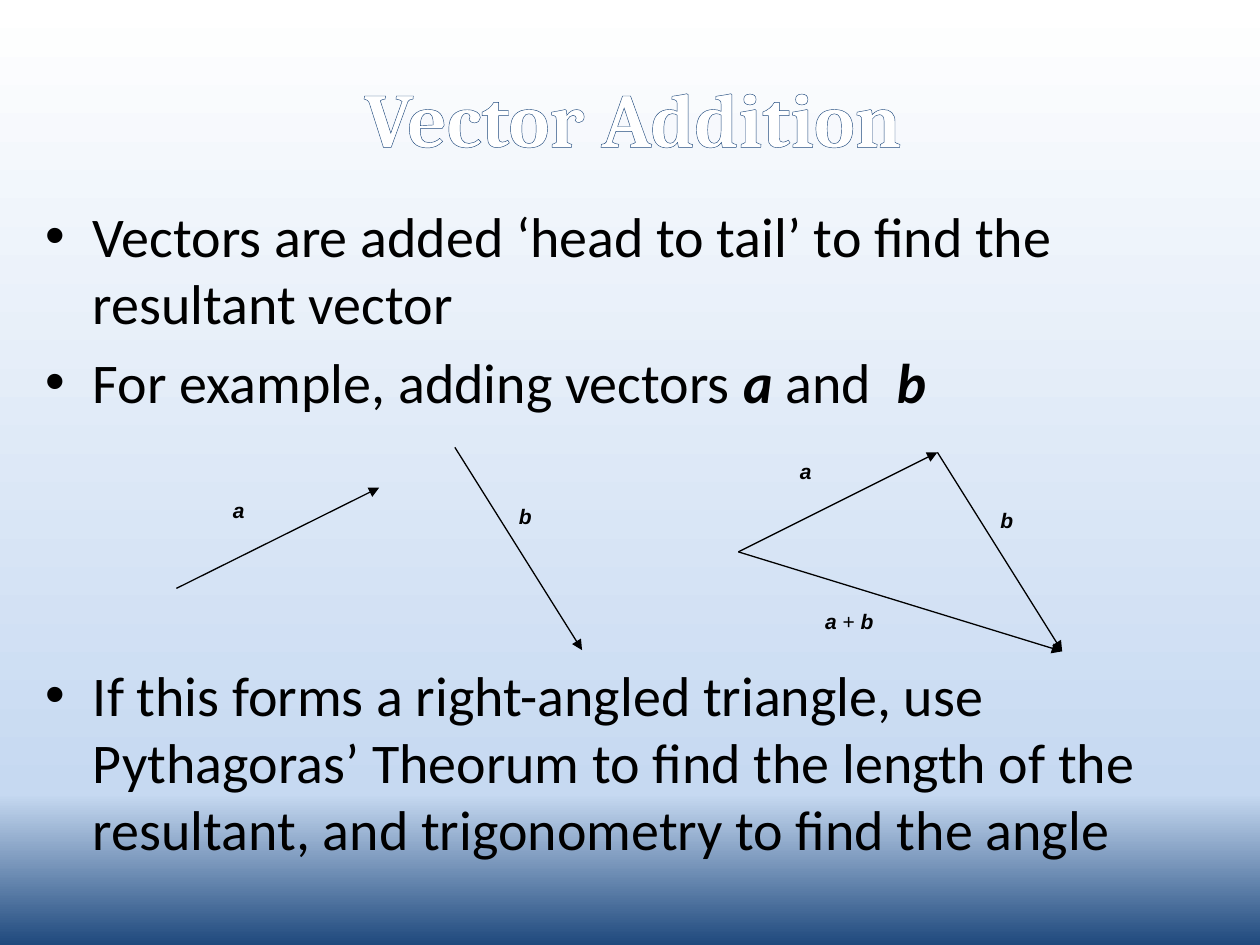
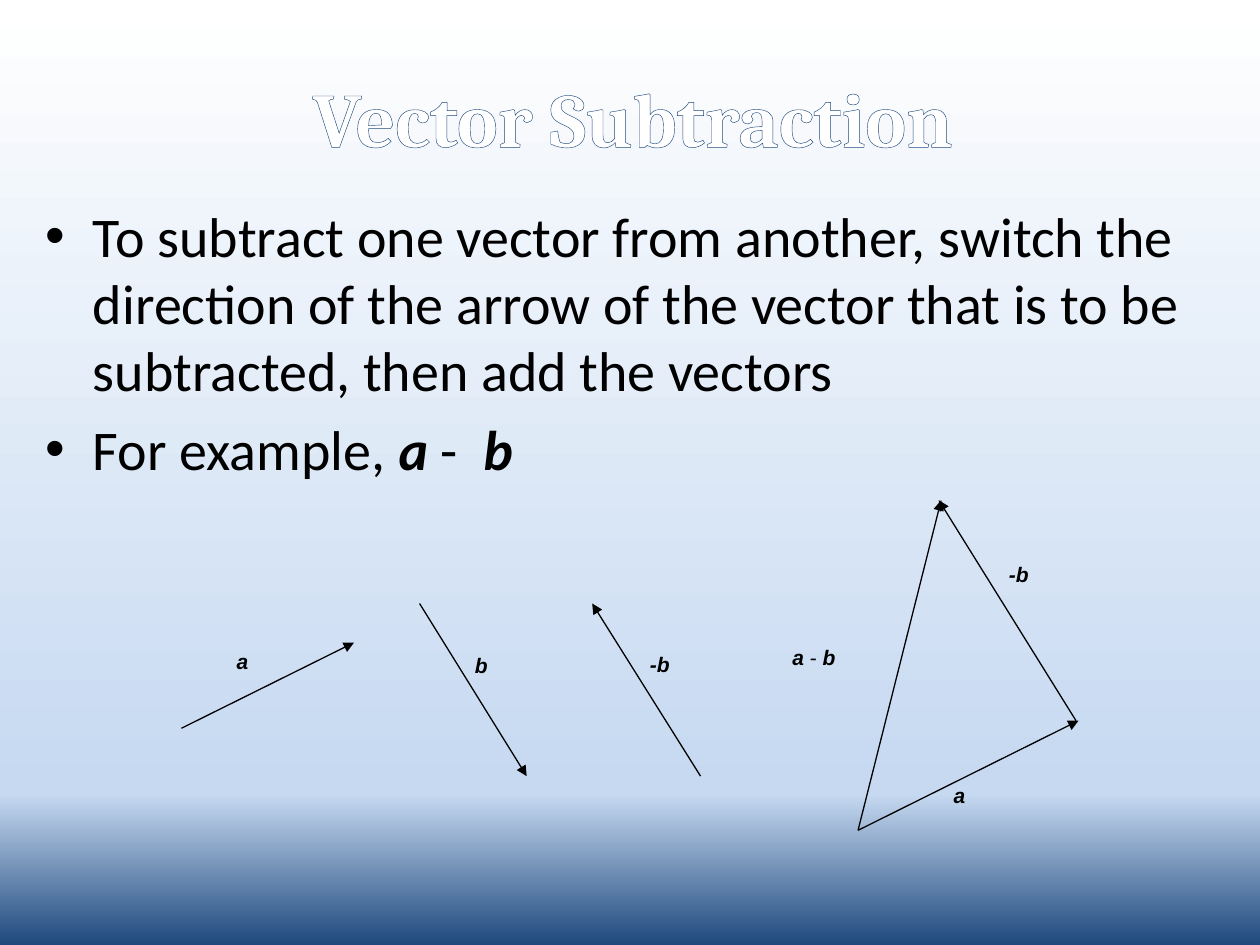
from copy import deepcopy
from dataclasses import dataclass

from lxml.etree import SubElement
from pptx import Presentation
from pptx.dml.color import RGBColor
from pptx.enum.shapes import MSO_CONNECTOR
from pptx.enum.text import MSO_ANCHOR, PP_ALIGN
from pptx.oxml.ns import qn
from pptx.slide import Slide, SlideMaster
from pptx.util import Inches, Pt

NAVY = RGBColor(0x1F, 0x49, 0x7D)
SKY = RGBColor(0xC6, 0xD9, 0xF1)
WHITE = RGBColor(0xFF, 0xFF, 0xFF)
BLACK = RGBColor(0x00, 0x00, 0x00)
STOPS = ((0, NAVY), (0.16, SKY), (1, WHITE))

LEFT, CENTER = PP_ALIGN.LEFT, PP_ALIGN.CENTER
TOP, MIDDLE = MSO_ANCHOR.TOP, MSO_ANCHOR.MIDDLE
STRAIGHT = MSO_CONNECTOR.STRAIGHT

Point = tuple[float, float]
Box = tuple[float, float, float, float]
TITLE_BOX: Box = (0.26, 0.3, 9.53, 1.25)
BODY_BOX: Box = (0.26, 1.55, 9.53, 5.71)
INDENT = Inches(0.38)
GAP = 6.4  # points between bullets
FIGURE_GAP = 140.5  # points left free for the arrows


@dataclass
class Arrow:
    start: Point
    tip: Point


@dataclass
class Label:
    text: str
    x: float
    y: float
    wide: float
    high: float


@dataclass
class Bullet:
    text: str
    before: float = GAP


@dataclass
class Page:
    title: str
    bullets: list[Bullet]
    arrows: list[Arrow]
    labels: list[Label]


PAGES = [
    Page(
        "Vector Addition",
        [
            Bullet("Vectors are added ‘head to tail’ to find the resultant vector", 0),
            Bullet("For example, adding vectors *a* and * b*"),
            Bullet("If this forms a right-angled triangle, use Pythagoras’ Theorum "
                   "to find the length of the resultant, and trigonometry to find "
                   "the angle", FIGURE_GAP),
        ],
        [
            Arrow((5.86, 4.38), (7.44, 3.59)),
            Arrow((7.44, 3.59), (8.43, 5.17)),
            Arrow((5.86, 4.38), (8.43, 5.17)),
            Arrow((1.4, 4.67), (3.01, 3.87)),
            Arrow((3.61, 3.55), (4.62, 5.16)),
        ],
        [
            Label("*a*", 6.25, 3.59, 0.59, 0.59),
            Label("*a* + *b*", 6.45, 4.78, 1.39, 0.59),
            Label("*b*", 7.84, 3.98, 0.59, 0.59),
            Label("*a*", 1.75, 3.9, 0.6, 0.6),
            Label("*b*", 4.02, 3.95, 0.6, 0.6),
        ],
    ),
    Page(
        "Vector Subtraction",
        [
            Bullet("To subtract one vector from another, switch the direction of the "
                   "arrow of the vector that is to be subtracted, then add the vectors",
                   0),
            Bullet("For example, *a* - * b*"),
        ],
        [
            Arrow((1.44, 5.78), (2.81, 5.1)),
            Arrow((5.56, 6.16), (4.7, 4.79)),
            Arrow((3.33, 4.79), (4.18, 6.16)),
            Arrow((6.81, 6.59), (8.56, 5.72)),
            Arrow((8.54, 5.72), (7.45, 3.97)),
            Arrow((6.81, 6.59), (7.47, 3.97)),
        ],
        [
            Label("*a*", 1.78, 5.1, 0.51, 0.51),
            Label("*-b*", 5.06, 5.12, 0.51, 0.51),
            Label("*b*", 3.67, 5.13, 0.51, 0.51),
            Label("*-b*", 7.91, 4.41, 0.66, 0.66),
            Label("*a* - *b*", 6.19, 5.07, 1.53, 0.66),
            Label("*a*", 7.47, 6.16, 0.66, 0.66),
        ],
    ),
]


def add_text(slide: Slide, box: Box, lines: list[Bullet], *, font: str, size: float,
             color: RGBColor = BLACK, bold: bool = False, align: PP_ALIGN = LEFT,
             anchor: MSO_ANCHOR = TOP, bullet: bool = False,
             edge: RGBColor | None = None) -> None:
    """Write lines of text; parts between asterisks are bold italic."""
    frame = slide.shapes.add_textbox(*map(Inches, box)).text_frame
    frame.word_wrap = True
    frame.vertical_anchor = anchor
    for index, line in enumerate(lines):
        para = frame.add_paragraph() if index else frame.paragraphs[0]
        para.alignment = align
        para.space_before = Pt(line.before)
        if bullet:
            props = para._p.get_or_add_pPr()
            props.set("marL", str(INDENT))
            props.set("indent", str(-INDENT))
            SubElement(props, qn("a:buFont")).set("typeface", "Arial")
            SubElement(props, qn("a:buChar")).set("char", "•")
        for part, text in enumerate(line.text.split("*")):
            if not text:
                continue
            run = para.add_run()
            run.text = text
            run.font.name = font
            run.font.size = Pt(size)
            run.font.color.rgb = color
            run.font.bold = bold or part % 2 == 1
            run.font.italic = part % 2 == 1
            if edge is not None:
                add_edge(run, edge)


def add_edge(run, color: RGBColor) -> None:
    """Outline the letters of a run."""
    props = run._r.get_or_add_rPr()
    line = SubElement(props, qn("a:ln"))
    line.set("w", str(Pt(2.48)))
    fill = SubElement(line, qn("a:solidFill"))
    SubElement(fill, qn("a:srgbClr")).set("val", str(color))
    props.insert(0, line)


def add_arrow(slide: Slide, arrow: Arrow) -> None:
    ends = map(Inches, arrow.start + arrow.tip)
    link = slide.shapes.add_connector(STRAIGHT, *ends)
    link.line.color.rgb = BLACK
    link.line.width = Pt(0.75)
    props = link.element.spPr
    SubElement(props.find(qn("a:ln")), qn("a:tailEnd")).set("type", "triangle")
    SubElement(props, qn("a:effectLst"))


def paint_master(master: SlideMaster) -> None:
    """Give every slide the same gradient, dark at the foot."""
    fill = master.background.fill
    fill.gradient()
    fill.gradient_angle = 90
    stops = next(master.element.iter(qn("a:gsLst")))
    stops.append(deepcopy(stops[0]))
    for stop, (place, color) in zip(fill.gradient_stops, STOPS):
        stop.position = place
        stop.color.rgb = color


def add_page(deck: Presentation, page: Page) -> None:
    slide = deck.slides.add_slide(deck.slide_layouts[6])
    # Title and bullets
    add_text(slide, TITLE_BOX, [Bullet(page.title, 0)], font="Cambria", size=44,
             color=WHITE, bold=True, align=CENTER, anchor=MIDDLE, edge=NAVY)
    add_text(slide, BODY_BOX, page.bullets, font="Calibri", size=32, bullet=True)
    # Vector figures
    for arrow in page.arrows:
        add_arrow(slide, arrow)
    for label in page.labels:
        box = (label.x, label.y, label.wide, label.high)
        add_text(slide, box, [Bullet(label.text, 0)], font="Arial", size=12)


def main() -> None:
    deck = Presentation()
    deck.slide_width, deck.slide_height = Inches(10), Inches(7.5)
    paint_master(deck.slide_master)
    for page in PAGES:
        add_page(deck, page)
    deck.save("out.pptx")


if __name__ == "__main__":
    main()
